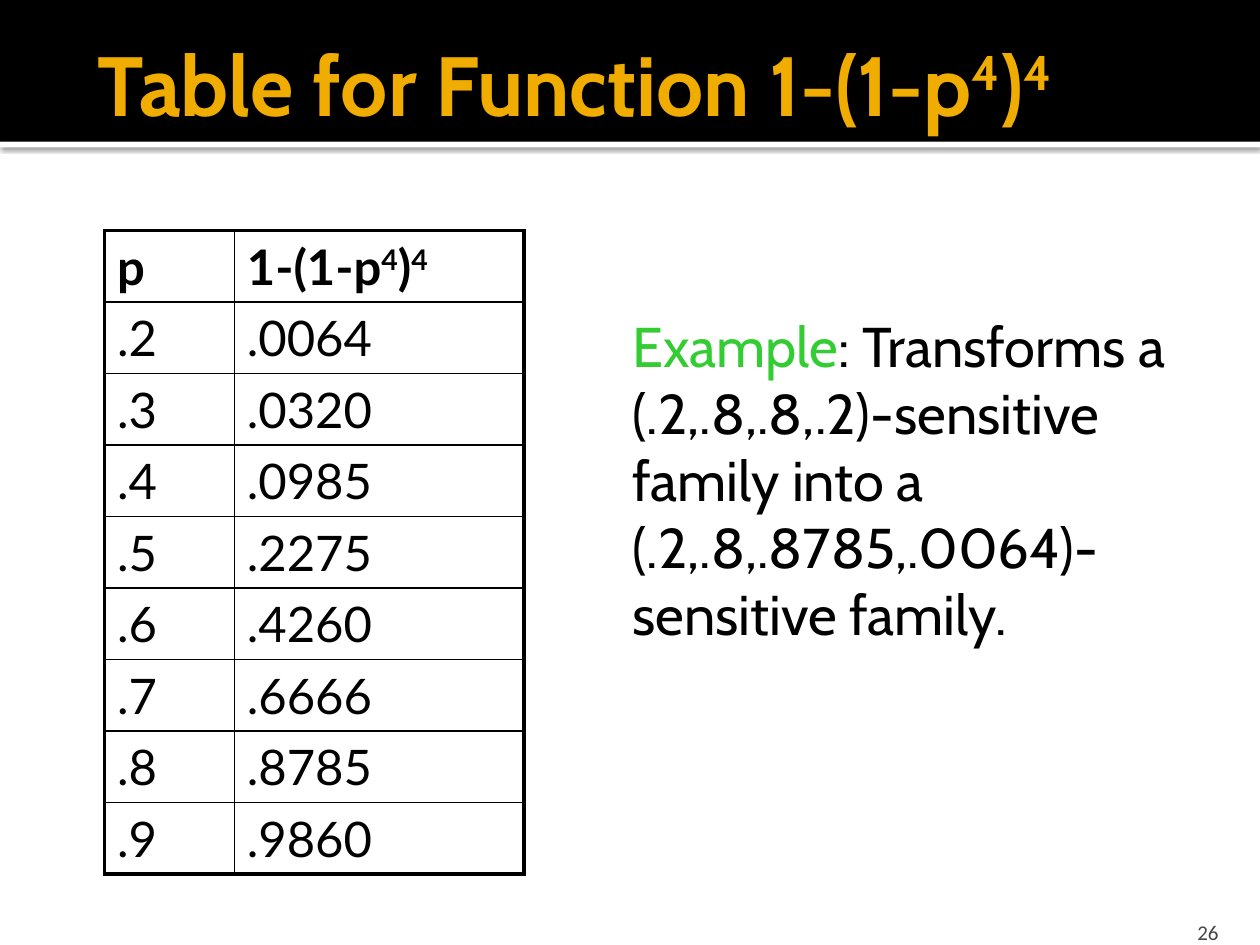
from dataclasses import dataclass

from lxml import etree
from pptx import Presentation
from pptx.dml.color import RGBColor
from pptx.enum.shapes import MSO_SHAPE
from pptx.enum.text import MSO_ANCHOR, PP_ALIGN
from pptx.oxml import parse_xml
from pptx.oxml.ns import qn
from pptx.util import Inches, Pt

RECTANGLE = MSO_SHAPE.RECTANGLE
LEFT, RIGHT = PP_ALIGN.LEFT, PP_ALIGN.RIGHT
TOP, MIDDLE, BOTTOM = MSO_ANCHOR.TOP, MSO_ANCHOR.MIDDLE, MSO_ANCHOR.BOTTOM

BLACK = RGBColor(0x00, 0x00, 0x00)
WHITE = RGBColor(0xFF, 0xFF, 0xFF)
GOLD = RGBColor(0xF0, 0xAD, 0x00)
GREEN = RGBColor(0x33, 0xCC, 0x33)
GREY = RGBColor(0x45, 0x45, 0x45)

PAGE_WIDTH, PAGE_HEIGHT = Inches(10), Inches(7.5)
BAND_SHARE = 0.15
OUTER_LINE, INNER_LINE = Pt(2.25), Pt(1)
COLUMN_WIDTHS = (1.03, 2.3)
TABLE_HEIGHT = 5.1
DRAWING_NS = "http://schemas.openxmlformats.org/drawingml/2006/main"
STRIP_SHADOW = (
    f'<a:effectLst xmlns:a="{DRAWING_NS}">'
    f'<a:outerShdw blurRad="{Pt(2.5)}" dist="{Pt(0.8)}" dir="5400000" rotWithShape="0">'
    '<a:srgbClr val="000000"><a:alpha val="60000"/></a:srgbClr>'
    "</a:outerShdw></a:effectLst>"
)


@dataclass(frozen=True)
class Style:
    font: str
    size: float
    color: RGBColor
    bold: bool = False


@dataclass(frozen=True)
class Piece:
    text: str
    raised: bool = False
    color: RGBColor | None = None


TITLE = Style("Cabin", 48, GOLD, True)
HEADER = Style("Lato", 28, BLACK, True)
VALUE = Style("Lato", 28, BLACK)
EXAMPLE = Style("Cabin", 32, BLACK)
NUMBER = Style("Calibri", 12, GREY)

FOUR = Piece("4", raised=True)
FORMULA = [Piece("1-(1-p"), FOUR, Piece(")"), FOUR]
VALUES = {
    ".2": ".0064",
    ".3": ".0320",
    ".4": ".0985",
    ".5": ".2275",
    ".6": ".4260",
    ".7": ".6666",
    ".8": ".8785",
    ".9": ".9860",
}
EXAMPLE_LINES = [
    [Piece("Example", color=GREEN), Piece(": Transforms a")],
    [Piece("(.2,.8,.8,.2)-sensitive")],
    [Piece("family into a")],
    [Piece("(.2,.8,.8785,.0064)-")],
    [Piece("sensitive family.")],
]


def write(frame, lines: list[list[Piece]], style: Style, align=LEFT) -> None:
    for index, pieces in enumerate(lines):
        para = frame.add_paragraph() if index else frame.paragraphs[0]
        para.alignment = align
        for piece in pieces:
            span = para.add_run()
            span.text = piece.text
            span.font.name = style.font
            span.font.size = Pt(style.size)
            span.font.bold = style.bold
            span.font.color.rgb = piece.color or style.color
            if piece.raised:
                span._r.get_or_add_rPr().set("baseline", "30000")


def set_margins(frame, left: float, top: float, right: float, bottom: float) -> None:
    frame.margin_left, frame.margin_top = Inches(left), Inches(top)
    frame.margin_right, frame.margin_bottom = Inches(right), Inches(bottom)


def add_bar(page, top: float, height: float, color: RGBColor):
    bar = page.shapes.add_shape(
        RECTANGLE, 0, round(PAGE_HEIGHT * top), PAGE_WIDTH, round(PAGE_HEIGHT * height)
    )
    bar.shadow.inherit = False
    bar.fill.solid()
    bar.fill.fore_color.rgb = color
    bar.line.fill.background()
    return bar


def add_header_band(page) -> None:
    strip = add_bar(page, BAND_SHARE, 0.006, WHITE)
    properties = strip._element.spPr
    properties.remove(properties.find(qn("a:effectLst")))
    properties.append(parse_xml(STRIP_SHADOW))
    add_bar(page, 0, BAND_SHARE, BLACK)


def place_title(page) -> None:
    title = page.shapes.title
    page.shapes._spTree.append(title._element)
    title.left, title.top = Inches(0.67), Inches(0.03)
    title.width, title.height = Inches(8.5), Inches(1.25)
    frame = title.text_frame
    frame.vertical_anchor = MIDDLE
    set_margins(frame, 0.1, 0.05, 0.05, 0.05)
    write(frame, [[Piece("Table for Function "), *FORMULA]], TITLE)


def add_border(cell, side: str, width: int) -> None:
    line = etree.SubElement(cell._tc.get_or_add_tcPr(), qn(f"a:ln{side}"), w=str(width))
    fill = etree.SubElement(line, qn("a:solidFill"))
    etree.SubElement(fill, qn("a:srgbClr"), val=str(BLACK))


def add_value_table(page) -> None:
    rows = [([Piece("p")], FORMULA)]
    rows += [([Piece(p)], [Piece(result)]) for p, result in VALUES.items()]
    last_row, last_column = len(rows) - 1, len(COLUMN_WIDTHS) - 1
    table = page.shapes.add_table(
        len(rows), len(COLUMN_WIDTHS), Inches(0.83), Inches(1.83),
        Inches(sum(COLUMN_WIDTHS)), Inches(TABLE_HEIGHT),
    ).table
    table.first_row = table.horz_banding = False
    for column, width in zip(table.columns, COLUMN_WIDTHS):
        column.width = Inches(width)
    for r, entries in enumerate(rows):
        for c, pieces in enumerate(entries):
            cell = table.cell(r, c)
            edges = {"L": c == 0, "R": c == last_column, "T": r == 0, "B": r == last_row}
            for side, outer in edges.items():
                add_border(cell, side, OUTER_LINE if outer else INNER_LINE)
            cell.fill.background()
            write(cell.text_frame, [pieces], VALUE if r else HEADER)


def add_text(page, left: float, top: float, width: float, height: float,
             lines: list[list[Piece]], style: Style, align=LEFT, anchor=TOP):
    box = page.shapes.add_textbox(Inches(left), Inches(top), Inches(width), Inches(height))
    frame = box.text_frame
    frame.vertical_anchor = anchor
    write(frame, lines, style, align)
    return frame


def main() -> None:
    deck = Presentation()
    deck.slide_width, deck.slide_height = PAGE_WIDTH, PAGE_HEIGHT
    page = deck.slides.add_slide(deck.slide_layouts[5])
    add_header_band(page)
    number = add_text(page, 8.97, 7.2, 0.8, 0.3, [[Piece("26")]], NUMBER, RIGHT, BOTTOM)
    number.word_wrap = True
    set_margins(number, 0.1, 0.05, 0.1, 0)
    place_title(page)
    add_value_table(page)
    add_text(page, 4.92, 2.42, 4.74, 2.77, EXAMPLE_LINES, EXAMPLE)
    deck.save("out.pptx")


if __name__ == "__main__":
    main()
